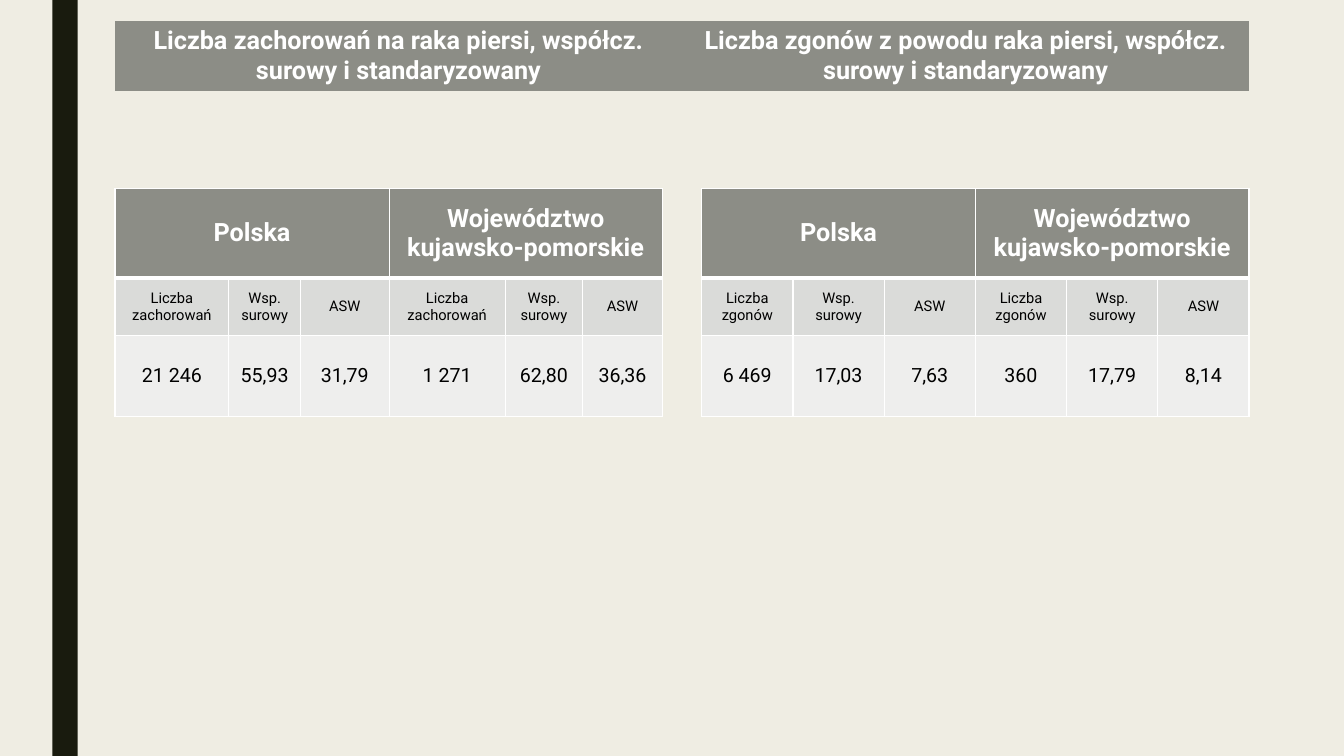
from dataclasses import dataclass

from lxml import etree
from pptx import Presentation
from pptx.dml.color import RGBColor
from pptx.enum.shapes import MSO_SHAPE
from pptx.enum.text import MSO_ANCHOR, PP_ALIGN
from pptx.oxml.ns import qn
from pptx.util import Inches, Pt

RECT = MSO_SHAPE.RECTANGLE
MIDDLE = MSO_ANCHOR.MIDDLE
CENTER = PP_ALIGN.CENTER


@dataclass(frozen=True)
class Theme:
    font: str = "Roboto"
    paper: str = "EFEDE3"
    bar: str = "191B0E"
    head: str = "8C8D86"
    label: str = "DADBD9"
    value: str = "EEEEED"
    white: str = "FFFFFF"
    black: str = "000000"
    head_size: float = 18
    label_size: float = 10.5
    value_size: float = 14
    thin: float = 1
    thick: float = 3


@dataclass(frozen=True)
class Panel:
    """One table of counts and rates for Poland and the region."""
    left: float
    cols: tuple[float, ...]
    count: str
    values: tuple[str, ...]


THEME = Theme()
LEFT, TOP = 1.14, 1.87
REGIONS = ("Polska", "Województwo kujawsko-pomorskie")
TITLES = (
    "Liczba zachorowań na raka piersi, współcz. surowy i standaryzowany",
    "Liczba zgonów z powodu raka piersi, współcz. surowy i standaryzowany",
)
PANELS = (
    Panel(LEFT, (1.13, 0.71, 0.88, 1.15, 0.77, 0.79), "Liczba zachorowań",
          ("21 246", "55,93", "31,79", "1 271", "62,80", "36,36")),
    Panel(6.96, (5.43 / 6,) * 6, "Liczba zgonów",
          ("6 469", "17,03", "7,63", "360", "17,79", "8,14")),
)


def rgb(code: str) -> RGBColor:
    return RGBColor.from_string(code)


def write(cell, text: str, *, size: float, color: str, bold: bool = False) -> None:
    cell.vertical_anchor = MIDDLE
    para = cell.text_frame.paragraphs[0]
    para.alignment = CENTER
    run = para.add_run()
    run.text = text
    run.font.name = THEME.font
    run.font.size = Pt(size)
    run.font.bold = bold
    run.font.color.rgb = rgb(color)


def paint(cell, fill: str, top: float = 0, bottom: float = 0, side: float = 0) -> None:
    """Set the borders, where zero width means none, and then the fill."""
    props = cell._tc.get_or_add_tcPr()
    for tag, width in (("lnL", side), ("lnR", side), ("lnT", top), ("lnB", bottom)):
        line = etree.SubElement(props, qn(f"a:{tag}"), w=str(Pt(width)))
        if width:
            solid = etree.SubElement(line, qn("a:solidFill"))
            etree.SubElement(solid, qn("a:srgbClr"), val=THEME.white)
        else:
            etree.SubElement(line, qn("a:noFill"))
    cell.fill.solid()
    cell.fill.fore_color.rgb = rgb(fill)


def add_grid(slide, left: float, top: float, cols: tuple[float, ...],
             rows: tuple[float, ...]):
    frame = slide.shapes.add_table(len(rows), len(cols), Inches(left), Inches(top),
                                   Inches(sum(cols)), Inches(sum(rows)))
    table = frame.table
    table.horz_banding = False
    for col, width in zip(table.columns, cols):
        col.width = Inches(width)
    for row, height in zip(table.rows, rows):
        row.height = Inches(height)
    return table


def add_banner(slide) -> None:
    table = add_grid(slide, LEFT, 0.21, (5.625, 5.625), (0.69,))
    for col, title in enumerate(TITLES):
        cell = table.cell(0, col)
        paint(cell, THEME.head)
        write(cell, title, size=THEME.head_size, color=THEME.white, bold=True)


def add_panel(slide, panel: Panel) -> None:
    table = add_grid(slide, panel.left, TOP, panel.cols, (0.89, 0.57, 0.8))
    thin, thick = THEME.thin, THEME.thick
    labels = (panel.count, "Wsp. surowy", "ASW") * len(REGIONS)
    for col, (label, value) in enumerate(zip(labels, panel.values)):
        head, mid, low = (table.cell(row, col) for row in range(3))
        paint(head, THEME.head, thin, thick, thin)
        paint(mid, THEME.label, thick, thin, thin)
        paint(low, THEME.value, thin, thin, thin)
        write(mid, label, size=THEME.label_size, color=THEME.black)
        write(low, value, size=THEME.value_size, color=THEME.black)
    for index, region in enumerate(REGIONS):
        first = table.cell(0, 3 * index)
        first.merge(table.cell(0, 3 * index + 2))
        write(first, region, size=THEME.head_size, color=THEME.white, bold=True)


def add_bar(slide) -> None:
    bar = slide.shapes.add_shape(RECT, Inches(0.52), 0, Inches(0.25), Inches(7.5))
    bar.shadow.inherit = False
    bar.fill.solid()
    bar.fill.fore_color.rgb = rgb(THEME.bar)
    bar.line.fill.background()


def main() -> None:
    deck = Presentation()
    deck.slide_width, deck.slide_height = Inches(13.33), Inches(7.5)
    slide = deck.slides.add_slide(deck.slide_layouts[6])
    slide.background.fill.solid()
    slide.background.fill.fore_color.rgb = rgb(THEME.paper)
    add_bar(slide)
    add_banner(slide)
    for panel in PANELS:
        add_panel(slide, panel)
    deck.save("out.pptx")


if __name__ == "__main__":
    main()
